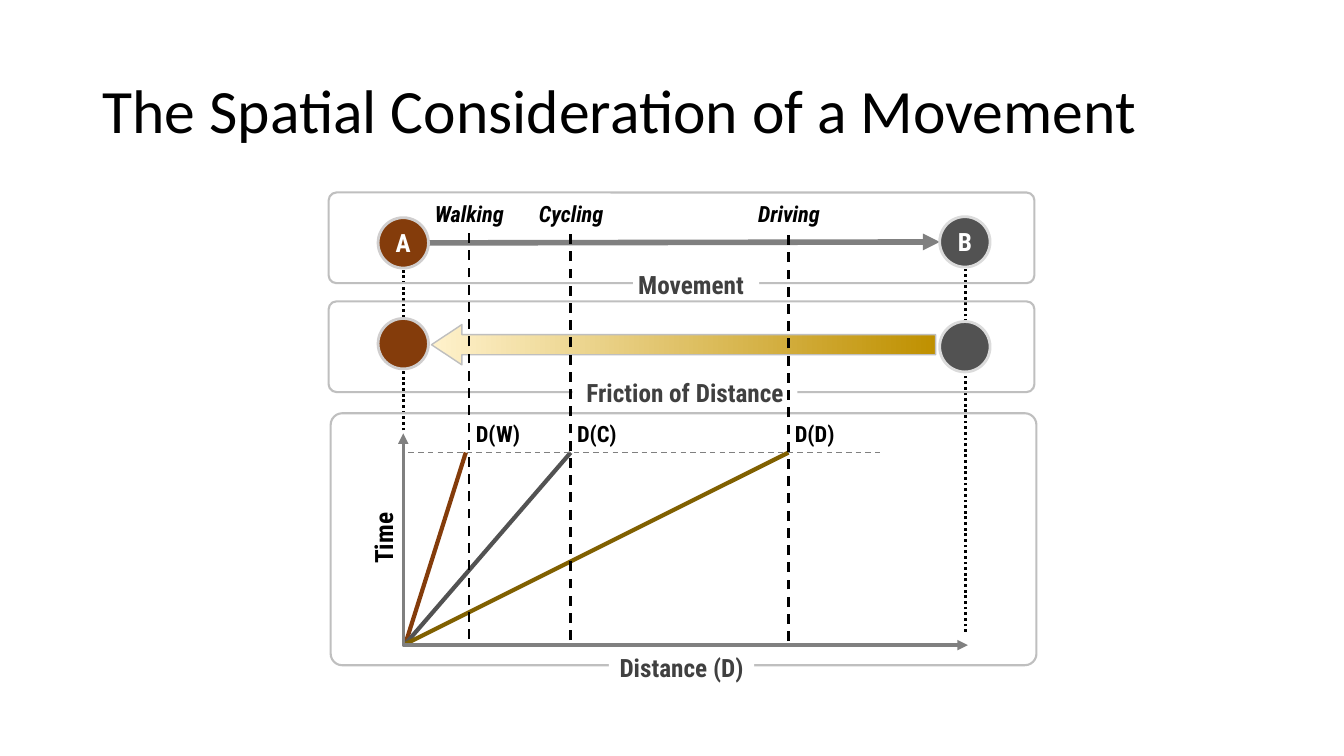
from collections import namedtuple

from lxml import etree
from pptx import Presentation
from pptx.dml.color import RGBColor
from pptx.enum.dml import MSO_LINE
from pptx.enum.shapes import MSO_CONNECTOR, MSO_SHAPE
from pptx.enum.text import MSO_ANCHOR, MSO_AUTO_SIZE, PP_ALIGN
from pptx.oxml.ns import qn
from pptx.util import Inches, Pt

STRAIGHT = MSO_CONNECTOR.STRAIGHT
DASH, DOT = MSO_LINE.DASH, MSO_LINE.ROUND_DOT
ROUNDED, OVAL, LEFT_ARROW = MSO_SHAPE.ROUNDED_RECTANGLE, MSO_SHAPE.OVAL, MSO_SHAPE.LEFT_ARROW
LEFT, CENTER = PP_ALIGN.LEFT, PP_ALIGN.CENTER
TOP, MIDDLE = MSO_ANCHOR.TOP, MSO_ANCHOR.MIDDLE
GROW, FIXED = MSO_AUTO_SIZE.SHAPE_TO_FIT_TEXT, MSO_AUTO_SIZE.NONE

COLORS = {
    "black": "000000", "white": "FFFFFF", "brown": "843C0B", "dark": "525252",
    "olive": "806000", "border": "BFBFBF", "axis": "808080", "caption": "404040",
    "ring_a": "D0CECE", "ring_b": "DBDBDB", "pale": "FFF2CC", "gold": "BF9000",
}
BODY, HEADING = "Roboto Condensed", "Calibri"
CELLS_PER_INCH = 10
CIRCLE = 5

Box = namedtuple("Box", "left top width height")
Mode = namedtuple("Mode", "name symbol column slope_column color symbol_width")
MODES = [
    Mode("Walking", "D(W)", 6.5, 6.2, "brown", 7.4),
    Mode("Cycling", "D(C)", 16.6, 16.6, "dark", 6.8),
    Mode("Driving", "D(D)", 38.2, 38.2, "olive", 6.8),
]


def cells(*counts):
    """Turn grid cells into slide lengths."""
    return [Inches(count / CELLS_PER_INCH) for count in counts]


def inside(box, column, row, width, height):
    """Return a box placed by its offset in an outer box."""
    return Box(box.left + column, box.top + row, width, height)


def color(name):
    """Look up a named colour."""
    return RGBColor.from_string(COLORS[name])


def style_line(shape, name, weight, dash=None, arrows=()):
    """Set the colour, weight, dash and arrowheads of an outline."""
    shape.line.color.rgb = color(name)
    shape.line.width = Pt(weight)
    if dash:
        shape.line.dash_style = dash
    outline = shape.line._get_or_add_ln()
    for end in arrows:
        etree.SubElement(outline, qn(f"a:{end}"), type="triangle")


def write(shape, text, size=18, font=BODY, name="black", bold=True, italic=False,
          align=CENTER, anchor=TOP, spacing=1.0, margins=(0.1, 0.05),
          wrap=False, fit=GROW):
    """Write one formatted paragraph into a shape."""
    frame = shape.text_frame
    frame.word_wrap = wrap
    frame.auto_size = fit
    frame.vertical_anchor = anchor
    frame.margin_left = frame.margin_right = Inches(margins[0])
    frame.margin_top = frame.margin_bottom = Inches(margins[1])
    para = frame.paragraphs[0]
    para.alignment = align
    para.line_spacing = spacing
    span = para.add_run()
    span.text = text
    span.font.name = font
    span.font.size = Pt(size)
    span.font.bold = bold
    span.font.italic = italic
    span.font.color.rgb = color(name)


def add_text(slide, box, text, **format_options):
    """Add a text box and return it."""
    shape = slide.shapes.add_textbox(*cells(*box))
    write(shape, text, **format_options)
    return shape


def add_figure(slide, kind, box, border, weight, fill=None):
    """Add a flat preset shape and return it."""
    shape = slide.shapes.add_shape(kind, *cells(*box))
    shape.shadow.inherit = False
    if fill:
        shape.fill.solid()
        shape.fill.fore_color.rgb = color(fill)
    else:
        shape.fill.background()
    style_line(shape, border, weight)
    return shape


def add_line(slide, start, end, name, weight, dash=None, arrows=()):
    """Add a straight connector without a shadow."""
    line = slide.shapes.add_connector(STRAIGHT, *cells(*start, *end))
    style_line(line, name, weight, dash, arrows)
    etree.SubElement(line._element.spPr, qn("a:effectLst"))


def add_panel(slide, box, rounding, caption, caption_box, align=CENTER):
    """Draw a rounded frame with a caption set into its lower edge."""
    frame = add_figure(slide, ROUNDED, box, "border", 1.5)
    frame.adjustments[0] = rounding
    label = add_text(slide, inside(box, *caption_box), caption, name="caption",
                     align=align, margins=(0.05, 0), wrap=True)
    label.fill.solid()
    label.fill.fore_color.rgb = color("white")


def add_ends(slide, box, rows, letters=("", "")):
    """Draw the circles of the two places."""
    styles = [(4.9, "brown", "ring_a"), (60.6, "dark", "ring_b")]
    for (column, fill, ring), row, letter in zip(styles, rows, letters):
        spot = inside(box, column, row, CIRCLE, CIRCLE)
        circle = add_figure(slide, OVAL, spot, ring, 2, fill)
        if letter:
            write(circle, letter, name="white", anchor=MIDDLE, fit=FIXED)


def add_title(slide, box):
    """Write the slide title."""
    add_text(slide, box, "The Spatial Consideration of a Movement", size=44,
             font=HEADING, bold=False, align=LEFT, anchor=MIDDLE, spacing=0.9,
             wrap=True, fit=FIXED)


def add_movement(slide, box):
    """Draw the movement from A to B with the names of the modes."""
    add_panel(slide, box, 0.087, "Movement", (30.2, 7.6, 12.5, 3), LEFT)
    for mode in MODES:
        width = 9.7 if mode.name == "Walking" else 9.1
        spot = inside(box, 7.45 + mode.column - width / 2, 0.6, width, 3.4)
        add_text(slide, spot, mode.name, size=16, italic=True, spacing=0.9)
    add_line(slide, (box.left + 9.9, box.top + 5), (box.left + 60.6, box.top + 4.9),
             "axis", 4, arrows=["tailEnd"])
    add_ends(slide, box, (2.5, 2.4), "AB")


def add_friction(slide, box):
    """Draw the friction of distance as a fading arrow."""
    add_panel(slide, box, 0.087, "Friction of Distance", (24.2, 7.5, 22.3, 3))
    add_ends(slide, box, (1.7, 2))
    arrow = add_figure(slide, LEFT_ARROW, inside(box, 10.2, 2.3, 50, 4), "border", 1)
    arrow.adjustments[0] = 0.5
    arrow.adjustments[1] = 0.754
    arrow.fill.gradient()
    arrow.fill.gradient_angle = 0
    for stop, name in zip(arrow.fill.gradient_stops, ("pale", "gold")):
        stop.color.rgb = color(name)


def add_time_distance(slide, box):
    """Draw the time and distance diagram."""
    add_panel(slide, box, 0.046, "Distance (D)", (27.6, 23.7, 14.4, 3))
    axis, base, limit = box.left + 7.2, box.top + 23, box.top + 3.9
    for mode in MODES:
        spot = Box(axis + mode.column - 0.8, box.top + 0.5, mode.symbol_width, 3.4)
        add_text(slide, spot, mode.symbol, size=16, spacing=0.9)
        add_line(slide, (axis + 0.2, base - 0.1), (axis + mode.slope_column, limit),
                 mode.color, 3)
    time_label = add_text(slide, inside(box, 2.4, 10.9, 5.6, 3), "Time", margins=(0, 0))
    time_label.rotation = 270
    add_line(slide, (axis + 0.5, limit), (axis + 47.3, limit), "axis", 1, DASH)
    builder = slide.shapes.build_freeform(*cells(axis, box.top + 2))
    builder.add_line_segments([cells(axis, base), cells(axis + 56, base)], close=False)
    axes = builder.convert_to_shape()
    axes.shadow.inherit = False
    axes.fill.background()
    style_line(axes, "axis", 2.5, arrows=["headEnd", "tailEnd"])


def add_place_guides(slide, box):
    """Draw the dotted lines that carry A and B down the panels."""
    for column, length in ((7.4, 16), (63.2, 36)):
        x, top = box.left + column, box.top + 7.6
        add_line(slide, (x, top + length), (x, top), "black", 2, DOT)


def add_mode_guides(slide, box):
    """Draw the dashed line of each mode across the panels."""
    for index, mode in enumerate(MODES):
        x, top = box.left + 7.4 + mode.column, box.top + 3.3 + index / 10
        add_line(slide, (x, top + 41), (x, top), "black", 1.75, DASH)


def main():
    """Build and save the deck."""
    deck = Presentation()
    deck.slide_width, deck.slide_height = Inches(13.33), Inches(7.5)
    page = deck.slides.add_slide(deck.slide_layouts[6])
    movement = Box(32.6, 19.1, 70, 9)
    add_title(page, Box(9.2, 4, 115, 14.5))
    add_place_guides(page, movement)
    add_movement(page, movement)
    add_friction(page, inside(movement, 0, 10.8, 70, 9))
    add_time_distance(page, inside(movement, 0.2, 21.9, 70, 25))
    add_mode_guides(page, movement)
    deck.save("out.pptx")


if __name__ == "__main__":
    main()
